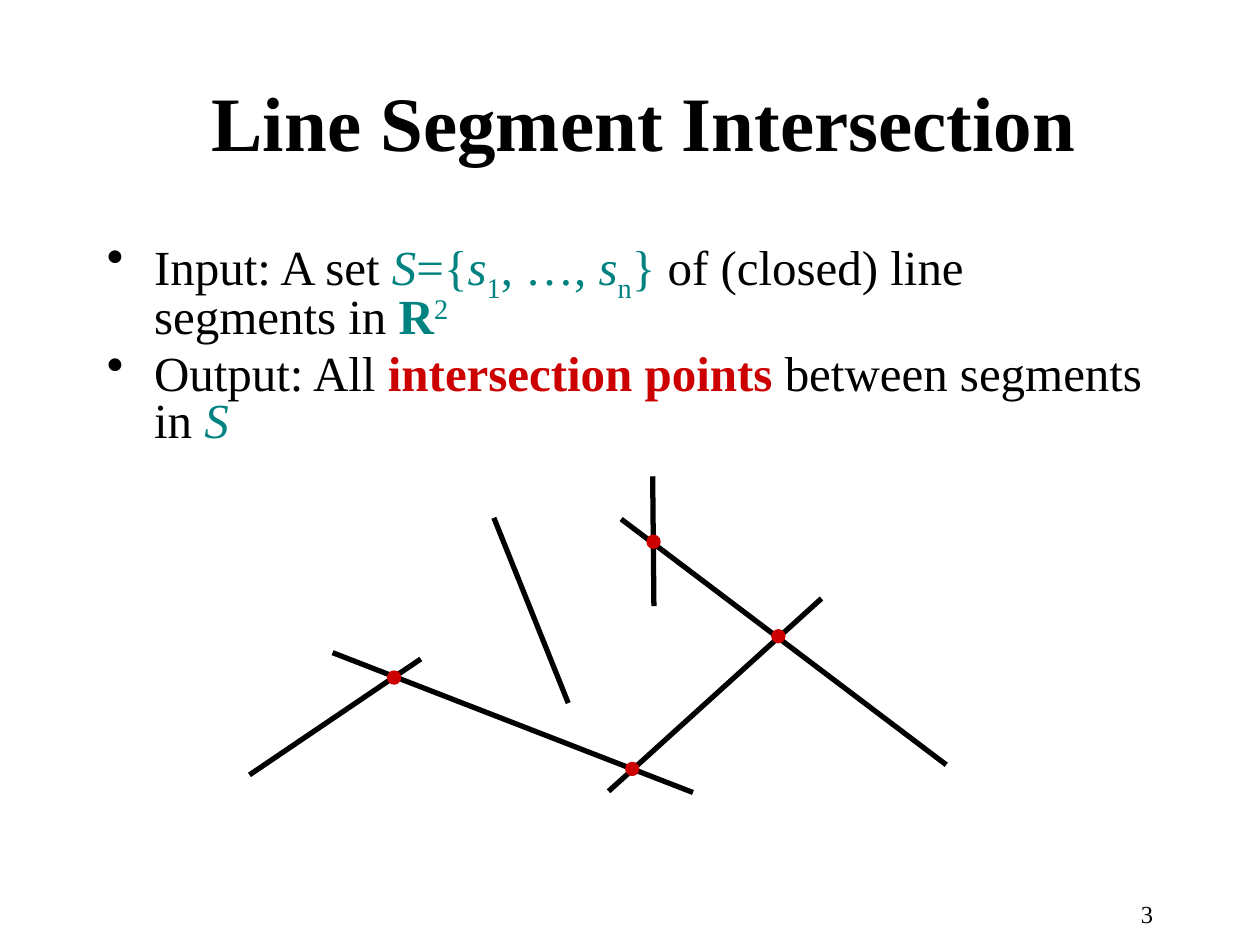
"""Build a slide that states the line segment intersection problem with a sketch."""
from dataclasses import dataclass

from lxml.etree import SubElement
from pptx import Presentation
from pptx.dml.color import RGBColor as Color
from pptx.enum.shapes import MSO_CONNECTOR as Connector, MSO_SHAPE as Shape
from pptx.enum.text import MSO_ANCHOR as Anchor, PP_ALIGN as Align
from pptx.oxml.ns import qn
from pptx.util import Pt


@dataclass(frozen=True)
class Theme:
    font: str = "Times New Roman"
    ink: Color = Color(0, 0, 0)
    math: Color = Color(0x00, 0x83, 0x80)
    accent: Color = Color(0xCC, 0, 0)
    title_size: int = 44
    body_size: int = 28
    number_size: int = 14
    segment_width: int = 3
    dot_size: float = 7.2


THEME = Theme()

STYLES = {
    "plain": {},
    "math": {"color": THEME.math},
    "variable": {"color": THEME.math, "italic": True},
    "subscript": {"color": THEME.math, "baseline": -25},
    "superscript": {"color": THEME.math, "baseline": 30},
    "space": {"color": THEME.math, "bold": True},
    "key": {"color": THEME.accent, "bold": True},
}

TITLE = "Line Segment Intersection"
PAGE_NUMBER = "3"
BULLETS = [
    [("Input: A set ", "plain"), ("S", "variable"), ("={", "math"),
     ("s", "variable"), ("1", "subscript"), (", …, ", "math"),
     ("s", "variable"), ("n", "subscript"), ("}", "math"),
     (" of (closed) line segments in ", "plain"),
     ("R", "space"), ("2", "superscript")],
    [("Output: All ", "plain"), ("intersection points", "key"),
     (" between segments in ", "plain"), ("S", "variable")],
]

TITLE_BOX = (113.76, 23.76, 594, 90)
BODY_BOX = (54, 135.36, 612, 131)
NUMBER_BOX = (607, 510, 59, 18)
INDENT = 27

SEGMENTS = [
    ((142.56, 442.8), (240.48, 376.56)),
    ((190.08, 372.96), (396, 452.88)),
    ((373.68, 346.32), (372.96, 272.16)),
    ((282.24, 295.92), (324.72, 401.76)),
    ((347.76, 452.16), (469.44, 342)),
    ((354.96, 296.64), (540.72, 437.04)),
]
INTERSECTIONS = [(225.2, 387.2), (361.3, 439.4), (373.5, 309.6), (444.8, 363.6)]


def place(shape, bounds):
    shape.left, shape.top, shape.width, shape.height = map(Pt, bounds)


def set_font(font, size, bold=False):
    font.name, font.size, font.bold = THEME.font, Pt(size), bold
    font.color.rgb = THEME.ink


def add_text_box(page, bounds):
    frame = page.shapes.add_textbox(*map(Pt, bounds)).text_frame
    frame.word_wrap = True
    return frame


def add_span(para, text, color=THEME.ink, bold=False, italic=False, baseline=0):
    span = para.add_run()
    span.text = text
    span.font.color.rgb = color
    span.font.bold, span.font.italic = bold, italic
    if baseline:
        span._r.get_or_add_rPr().set("baseline", str(baseline * 1000))


def add_bullet(para, spans):
    set_font(para.font, THEME.body_size)
    para.line_spacing = 0.8
    para.space_before = Pt(THEME.body_size * 0.2)
    properties = para._p.get_or_add_pPr()
    properties.set("marL", str(Pt(INDENT)))
    properties.set("indent", str(-Pt(INDENT)))
    mark = SubElement(properties, qn("a:buChar"), char="•")
    properties.find(qn("a:defRPr")).addprevious(mark)
    for text, style in spans:
        add_span(para, text, **STYLES[style])


def add_segment(page, start, end):
    segment = page.shapes.add_connector(Connector.STRAIGHT, *map(Pt, start + end))
    segment.line.color.rgb = THEME.ink
    segment.line.width = Pt(THEME.segment_width)
    SubElement(segment._element.spPr, qn("a:effectLst"))


def add_dot(page, x, y):
    size = THEME.dot_size
    bounds = (x - size / 2, y - size / 2, size, size)
    dot = page.shapes.add_shape(Shape.OVAL, *map(Pt, bounds))
    dot.shadow.inherit = False
    dot.fill.solid()
    dot.fill.fore_color.rgb = THEME.accent
    dot.line.color.rgb = THEME.accent
    dot.line.width = Pt(1)


def main():
    deck = Presentation()
    deck.slide_width, deck.slide_height = Pt(720), Pt(540)
    page = deck.slides.add_slide(deck.slide_layouts[5])

    title = page.shapes.title
    place(title, TITLE_BOX)
    title.text_frame.text = TITLE
    title.text_frame.vertical_anchor = Anchor.MIDDLE
    heading = title.text_frame.paragraphs[0]
    heading.alignment = Align.LEFT
    set_font(heading.font, THEME.title_size, bold=True)

    body = add_text_box(page, BODY_BOX)
    for index, spans in enumerate(BULLETS):
        add_bullet(body.add_paragraph() if index else body.paragraphs[0], spans)

    number = add_text_box(page, NUMBER_BOX).paragraphs[0]
    number.alignment = Align.RIGHT
    set_font(number.font, THEME.number_size)
    number.add_run().text = PAGE_NUMBER

    for start, end in SEGMENTS:
        add_segment(page, start, end)
    for x, y in INTERSECTIONS:
        add_dot(page, x, y)

    deck.save("out.pptx")


if __name__ == "__main__":
    main()
